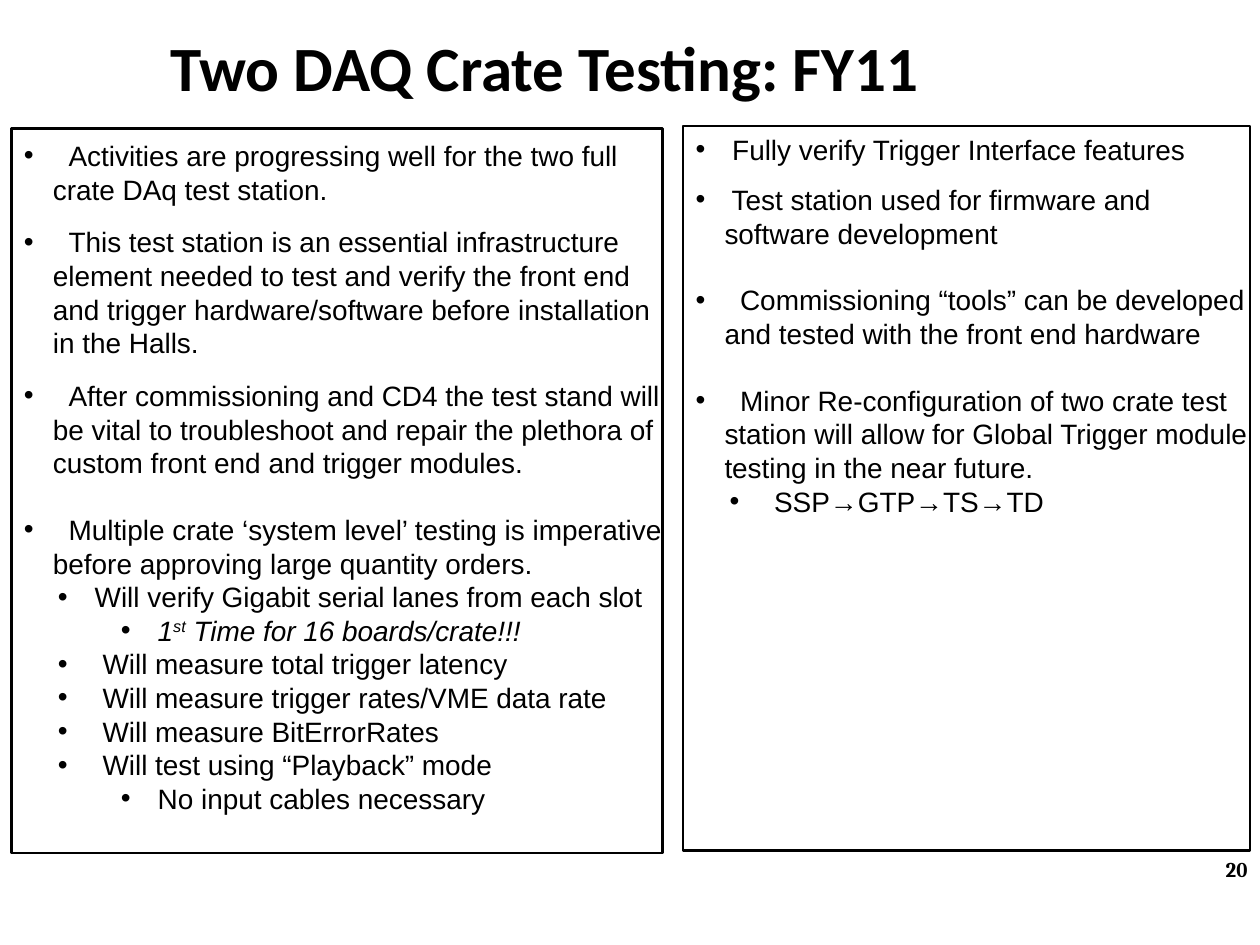
import pptx
import pptx.util
import pptx.dml.color
import pptx.enum.text
import pptx.oxml

Inches, Pt = pptx.util.Inches, pptx.util.Pt
BLACK = pptx.dml.color.RGBColor(0, 0, 0)

TITLE = "Two DAQ Crate Testing: FY11"
PAGE_NUMBER = "20"
TEXT_SIZE = 16
HANG = 0.23                     # distance from bullet to text
LEVEL_INDENTS = (HANG, 0.5, 1)
WIDE, NARROW = 4.5, 0           # extra points after the leading space

# Paragraphs: level, points before, width of lead, [(text, style), ...]
LEFT_PARAGRAPHS = [
    (0, 0, WIDE, [("Activities are progressing well for the two full crate DAq "
                   "test station.", "")]),
    (0, 11, WIDE, [("This test station is an essential infrastructure element "
                    "needed to test and verify the front end and trigger "
                    "hardware/software before installation in the Halls.", "")]),
    (0, 11, WIDE, [("After commissioning and CD4 the test stand will be vital to "
                    "troubleshoot and repair the plethora of custom front end "
                    "and trigger modules.", "")]),
    (0, 19, WIDE, [("Multiple crate ‘system level’ testing is imperative before "
                    "approving large quantity orders.", "")]),
    (1, 0, NARROW, [("Will verify Gigabit serial lanes from each slot", "")]),
    (2, 0, NARROW, [("1", "italic"), ("st", "italic superscript"),
                    (" Time for 16 boards/crate!!!", "italic")]),
    (1, 0, WIDE, [("Will measure total trigger latency", "")]),
    (1, 0, WIDE, [("Will measure trigger rates/VME data rate", "")]),
    (1, 0, WIDE, [("Will measure BitErrorRates", "")]),
    (1, 0, WIDE, [("Will test using “Playback” mode", "")]),
    (2, 0, NARROW, [("No input cables necessary", "")]),
]
RIGHT_PARAGRAPHS = [
    (0, 0, NARROW, [("Fully verify Trigger Interface features", "")]),
    (0, 9.5, NARROW, [("Test station used for firmware and software "
                       "development", "")]),
    (0, 19, WIDE, [("Commissioning “tools” can be developed and tested with the "
                    "front end hardware", "")]),
    (0, 19, WIDE, [("Minor Re-configuration of two crate test station will allow "
                    "for Global Trigger module testing in the near future.", "")]),
    (1, 0, WIDE, [("SSP→GTP→TS→TD", "")]),
]
# Box: left, top, width, height, top inset, paragraphs
BOXES = [
    (0.09, 1.02, 5.17, 5.75, 0.08, LEFT_PARAGRAPHS),
    (5.42, 1, 4.5, 5.75, 0.05, RIGHT_PARAGRAPHS),
]


def place(shape, left, top, width, height):
    shape.left, shape.top = Inches(left), Inches(top)
    shape.width, shape.height = Inches(width), Inches(height)


def add_run(paragraph, text, font_name, size, bold=False):
    run = paragraph.add_run()
    run.text = text
    run.font.name, run.font.size, run.font.bold = font_name, Pt(size), bold
    run.font.color.rgb = BLACK
    return run


def add_bullet(paragraph, level):
    paragraph.level = level
    properties = paragraph._p.get_or_add_pPr()
    properties.set("marL", str(Inches(LEVEL_INDENTS[level])))
    properties.set("indent", str(-Inches(HANG)))
    bullet = pptx.oxml.parse_xml(
        '<a:buChar xmlns:a="http://schemas.openxmlformats.org/drawingml/2006/main"'
        ' char="•"/>')
    properties.append(bullet)


def fill_list(frame, paragraphs):
    for index, (level, before, lead, runs) in enumerate(paragraphs):
        paragraph = frame.add_paragraph() if index else frame.paragraphs[0]
        add_bullet(paragraph, level)
        paragraph.space_before = Pt(before)
        lead_run = add_run(paragraph, " ", "Arial", TEXT_SIZE)
        if lead:
            lead_run.font._element.set("spc", str(int(lead * 100)))
        for text, style in runs:
            run = add_run(paragraph, text, "Arial", TEXT_SIZE)
            run.font.italic = "italic" in style
            if "superscript" in style:
                run.font._element.set("baseline", "30000")


def main():
    presentation = pptx.Presentation()
    presentation.slide_width, presentation.slide_height = Inches(10), Inches(7.5)
    slide = presentation.slides.add_slide(presentation.slide_layouts[3])
    title, *bodies = slide.placeholders

    place(title, 1.25, 0.17, 7.17, 0.71)
    title.text_frame.auto_size = pptx.enum.text.MSO_AUTO_SIZE.NONE
    paragraph = title.text_frame.paragraphs[0]
    paragraph.alignment = pptx.enum.text.PP_ALIGN.LEFT
    add_run(paragraph, TITLE, "Calibri", 36, bold=True)

    for body, (left, top, width, height, inset, paragraphs) in zip(bodies, BOXES):
        place(body, left, top, width, height)
        body.line.color.rgb = BLACK
        body.line.width = Pt(1.5)
        frame = body.text_frame
        frame.auto_size = pptx.enum.text.MSO_AUTO_SIZE.NONE
        frame.margin_top, frame.margin_right = Inches(inset), 0
        fill_list(frame, paragraphs)

    number = slide.shapes.add_textbox(
        Inches(9.63), Inches(6.75), Inches(0.37), Inches(0.3))
    number.text_frame.word_wrap = False
    add_run(number.text_frame.paragraphs[0], PAGE_NUMBER, "Cambria", 12, bold=True)

    presentation.save("out.pptx")


if __name__ == "__main__":
    main()
